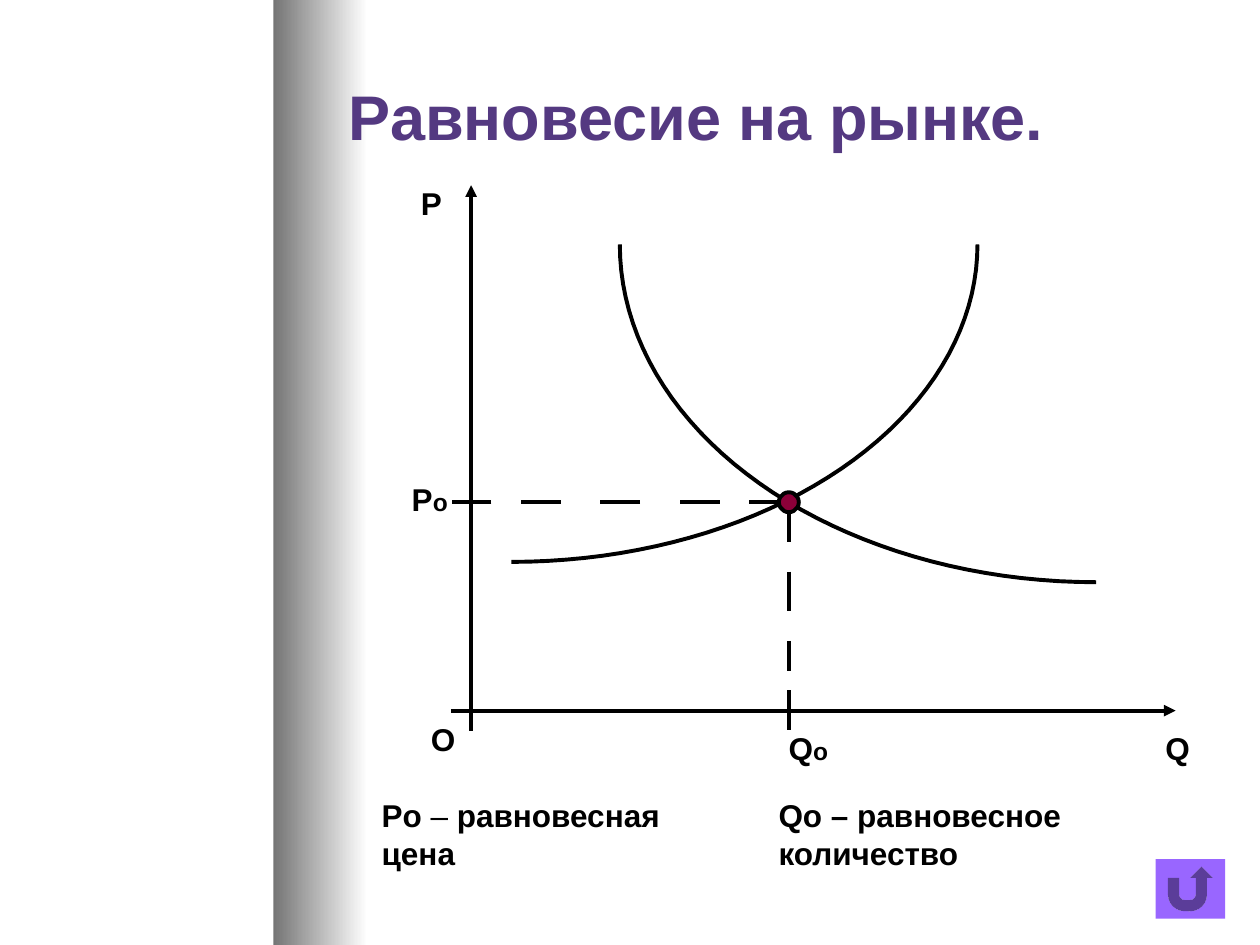
from math import cos, pi, sin

from lxml import etree
from pptx import Presentation
from pptx.dml.color import RGBColor
from pptx.enum.shapes import MSO_CONNECTOR, MSO_SHAPE
from pptx.enum.text import MSO_ANCHOR, MSO_AUTO_SIZE, PP_ALIGN
from pptx.oxml.ns import qn
from pptx.util import Pt

BLACK = RGBColor(0, 0, 0)
WHITE = RGBColor(255, 255, 255)
GREY = RGBColor(0x75, 0x75, 0x75)
PURPLE = RGBColor(0x54, 0x39, 0x81)
WINE = RGBColor(0x8C, 0, 0x39)
VIOLET = RGBColor(0x99, 0x66, 0xFF)

RECT, OVAL = MSO_SHAPE.RECTANGLE, MSO_SHAPE.OVAL
BUTTON = MSO_SHAPE.ACTION_BUTTON_RETURN
STRAIGHT = MSO_CONNECTOR.STRAIGHT
LEFT, MIDDLE = PP_ALIGN.LEFT, MSO_ANCHOR.MIDDLE
GROW, FIXED = MSO_AUTO_SIZE.SHAPE_TO_FIT_TEXT, MSO_AUTO_SIZE.NONE

FONT = "Arial"
STROKE = 2.25
DASH = 22.7
STEPS = 40


def style(run, size, color=BLACK, bold=True):
    font = run.font
    font.name, font.size, font.bold = FONT, Pt(size), bold
    font.color.rgb = color


def ink(line):
    line.color.rgb = BLACK
    line.width = Pt(STROKE)


def add_shape(slide, kind, box):
    shape = slide.shapes.add_shape(kind, *map(Pt, box))
    shape.shadow.inherit = False
    shape.line.fill.background()
    return shape


def add_text(slide, box, parts, wrap=False):
    """Each part is (text, size, bold)."""
    frame = slide.shapes.add_textbox(*map(Pt, box)).text_frame
    frame.word_wrap = wrap
    frame.auto_size = GROW
    for text, size, bold in parts:
        run = frame.paragraphs[0].add_run()
        run.text = text
        style(run, size, bold=bold)


def add_line(slide, x1, y1, x2, y2, arrow=False):
    line = slide.shapes.add_connector(STRAIGHT, *map(Pt, (x1, y1, x2, y2)))
    ink(line.line)
    props = line._element.spPr
    if arrow:
        etree.SubElement(props.find(qn("a:ln")), qn("a:tailEnd"),
                         type="triangle")
    etree.SubElement(props, qn("a:effectLst"))


def add_curve(slide, x, y, wide, high):
    """Quarter ellipse round (x, y); a negative width bends it left."""
    turns = [i * pi / 2 / STEPS for i in range(STEPS + 1)]
    points = [(Pt(x + wide * sin(t)), Pt(y + high * cos(t))) for t in turns]
    build = slide.shapes.build_freeform(*points[0])
    build.add_line_segments(points[1:], close=False)
    curve = build.convert_to_shape()
    curve.shadow.inherit = False
    curve.fill.background()
    ink(curve.line)


def draw_band(slide, box):
    band = add_shape(slide, RECT, box)
    band.fill.gradient()
    band.fill.gradient_angle = 0
    for stop, place, color in zip(band.fill.gradient_stops, (0, 1),
                                  (GREY, WHITE)):
        stop.position = place
        stop.color.rgb = color
    # Behind the title
    slide.shapes._spTree.insert(2, band._element)


def draw_title(slide, box, text):
    title = slide.shapes.title
    title.left, title.top, title.width, title.height = map(Pt, box)
    frame = title.text_frame
    frame.text = text
    frame.auto_size = FIXED
    frame.vertical_anchor = MIDDLE
    frame.paragraphs[0].alignment = LEFT
    style(frame.paragraphs[0].runs[0], 36, PURPLE)


def draw_graph(slide, box):
    left, top, wide, high = box
    right, foot = left + wide, top + high
    axis, base = left + 41, foot - 36
    mid, price = left + 222.6, top + 185.5
    tick = 11.5

    # Axes
    add_line(slide, axis, base + tick, axis, top + 4.3, arrow=True)
    add_line(slide, axis - tick, base, right - 15.8, base, arrow=True)

    # Demand and supply
    add_curve(slide, left + 398.2, top + 38.2, -272.2, 193)
    add_curve(slide, left + 64, top + 38.2, 266.4, 181.4)

    # Dashes from the balance point to both axes
    for start, size in ((0, DASH), (39.6, DASH), (79.2, 17), (107.3, DASH)):
        add_line(slide, mid, price + start, mid, price + start + size)
    for start in (0, 39.6, 85, 130.3, 170):
        add_line(slide, mid - start, price, mid - start - DASH, price)

    # Labels, with room to spare so that none breaks
    for x, y, width, name, sub in (
            (left + 11, foot - 34, 30, "О", ""),
            (left + 5.3, top, 28, "P", ""),
            (right - 28.8, foot - 28.8, 30, "Q", ""),
            (left, price - 16, 40, "P", "o"),
            (mid - 7.2, foot - 28.8, 42, "Q", "o")):
        parts = [(name, 18, True)]
        if sub:
            parts.append((sub, 14, True))
        add_text(slide, (x, y, width, 28.8), parts)

    # Balance point
    size = 11.4
    dot = add_shape(slide, OVAL, (mid - size / 2, price - size / 2, size, size))
    dot.fill.solid()
    dot.fill.fore_color.rgb = WINE
    ink(dot.line)


def draw_notes(slide, box):
    left, top, wide, high = box
    add_text(slide, (left, top, 177, high),
             [("Po ", 18, True), ("– ", 18, False),
              ("равновесная цена", 18, True)], wrap=True)
    add_text(slide, (left + wide - 227.5, top, 227.5, high),
             [("Qo – равновесное количество", 18, True)], wrap=True)


def draw_button(slide, box):
    button = add_shape(slide, BUTTON, box)
    button.fill.solid()
    button.fill.fore_color.rgb = VIOLET


def main():
    deck = Presentation()
    deck.slide_width, deck.slide_height = Pt(720), Pt(540)
    slide = deck.slides.add_slide(deck.slide_layouts[5])
    draw_band(slide, (156.2, 0, 54, 540))
    draw_title(slide, (192.2, 18, 504, 95.8), "Равновесие на рынке.")
    draw_notes(slide, (211, 451.4, 454.3, 50.4))
    draw_graph(slide, (228.2, 101.5, 459.4, 340.6))
    draw_button(slide, (660.3, 491, 39.7, 34))
    deck.save("out.pptx")


if __name__ == "__main__":
    main()
